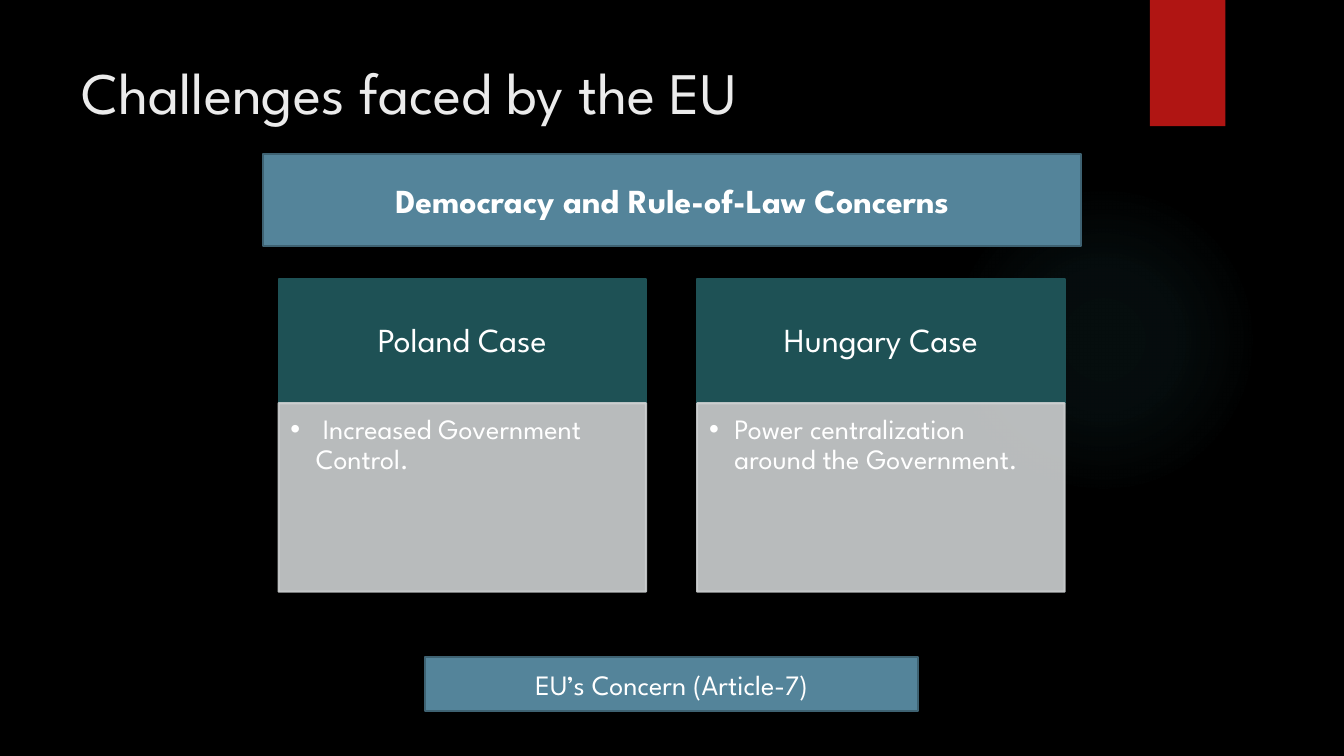
"""Builds the slide on the challenges faced by the EU."""
from dataclasses import dataclass

from lxml.etree import SubElement
from pptx import Presentation
from pptx.dml.color import RGBColor
from pptx.enum.shapes import MSO_SHAPE as Preset
from pptx.enum.text import MSO_ANCHOR as Anchor, MSO_AUTO_SIZE as AutoSize, PP_ALIGN as Align
from pptx.oxml import parse_xml
from pptx.oxml.ns import nsdecls, qn
from pptx.util import Cm, Pt


@dataclass(frozen=True)
class Theme:
    font: str = "League Spartan"
    background: str = "000000"
    title: str = "EBEBEB"
    text: str = "FFFFFF"
    banner: str = "54849A"
    banner_line: str = "3E6272"
    header: str = "1E5155"
    panel: str = "CDD0D1"
    ribbon: str = "B01513"
    glow: str = "50B9C1"
    title_size: int = 42
    heading_size: int = 24
    body_size: int = 20
    line_width: float = 1.5


theme = Theme()


def paint(box, place, fill, line, opacity=100):
    """Place a box and give it a fill and an outline."""
    box.left, box.top, box.width, box.height = (Cm(length) for length in place)
    box.fill.solid()
    box.fill.fore_color.rgb = RGBColor.from_string(fill)
    box.line.color.rgb = RGBColor.from_string(line)
    box.line.width = Pt(theme.line_width)
    if opacity < 100:
        for color in box.element.spPr.iter(qn("a:srgbClr")):
            SubElement(color, qn("a:alpha"), val=str(opacity * 1000))


def write(box, words, size, color=theme.text, bold=False, align=Align.CENTER,
          anchor=Anchor.MIDDLE, insets=(0.25, 0.13, 0.25, 0.13), spacing=1.0):
    """Set one paragraph in a box and return it."""
    frame = box.text_frame
    frame.word_wrap = True
    frame.auto_size = AutoSize.NONE
    frame.vertical_anchor = anchor
    (frame.margin_left, frame.margin_top,
     frame.margin_right, frame.margin_bottom) = (Cm(inset) for inset in insets)
    para = frame.paragraphs[0]
    para.alignment = align
    para.line_spacing = spacing
    para.space_before = Pt(0)
    span = para.add_run()
    span.text = words
    span.font.name = theme.font
    span.font.size = Pt(size)
    span.font.bold = bold
    span.font.color.rgb = RGBColor.from_string(color)
    return para


deck = Presentation()
deck.slide_width, deck.slide_height = Cm(33.87), Cm(19.05)
page = deck.slides.add_slide(deck.slide_layouts.get_by_name("Comparison"))
page.background.fill.solid()
page.background.fill.fore_color.rgb = RGBColor.from_string(theme.background)
title, *case_boxes = page.placeholders

glow = page.shapes.add_shape(Preset.OVAL, Cm(23.9), Cm(4.65), Cm(7.82), Cm(7.82))
glow.shadow.inherit = False
glow.line.fill.background()
glow.fill.background()
stops = "".join(
    f'<a:gs pos="{position * 1000}"><a:srgbClr val="{theme.glow}">'
    f'<a:alpha val="{opacity * 1000}"/></a:srgbClr></a:gs>'
    for position, opacity in ((0, 7), (36, 6), (69, 0)))
gradient = parse_xml(
    f'<a:gradFill {nsdecls("a")}><a:gsLst>{stops}</a:gsLst><a:path path="circle">'
    '<a:fillToRect l="50000" t="50000" r="50000" b="50000"/></a:path></a:gradFill>')
outline = glow.element.spPr
outline.replace(outline.find(qn("a:noFill")), gradient)

ribbon = page.shapes.add_shape(Preset.RECTANGLE, Cm(28.98), Cm(0), Cm(1.9), Cm(3.18))
ribbon.shadow.inherit = False
ribbon.line.fill.background()
ribbon.fill.solid()
ribbon.fill.fore_color.rgb = RGBColor.from_string(theme.ribbon)
for decoration in (glow, ribbon):
    title.element.addprevious(decoration.element)

title.left, title.top, title.width, title.height = Cm(1.8), Cm(1.27), Cm(26.14), Cm(3.89)
write(title, "Challenges faced by the EU", theme.title_size, theme.title,
      align=Align.LEFT, anchor=Anchor.TOP)

banners = (
    ("Democracy and Rule-of-Law Concerns", (6.63, 3.88, 20.62, 2.32), theme.heading_size, True),
    ("EU’s Concern (Article-7)", (10.72, 16.56, 12.42, 1.36), theme.body_size, False),
)
for words, place, size, bold in banners:
    banner = page.shapes.add_shape(Preset.RECTANGLE, 0, 0, 0, 0)
    banner.shadow.inherit = False
    paint(banner, place, theme.banner, theme.banner_line)
    write(banner, words, size, bold=bold)

cases = (
    ("Poland Case", " Increased Government Control."),
    ("Hungary Case", "Power centralization around the Government."),
)
for index, (heading, point) in enumerate(cases):
    left = 7.02 + index * 10.55
    header, panel = case_boxes[2 * index:2 * index + 2]
    paint(header, (left, 7.03, 9.26, 3.13), theme.header, theme.header)
    write(header, heading, theme.heading_size, insets=(0.48, 0.28, 0.48, 0.28), spacing=0.9)
    paint(panel, (left, 10.16, 9.26, 4.75), theme.panel, theme.panel, opacity=90)
    para = write(panel, point, theme.body_size, align=Align.LEFT, anchor=Anchor.TOP,
                 insets=(0.3, 0.3, 0.41, 0.43), spacing=0.9)
    properties = para._p.get_or_add_pPr()
    properties.set("marL", str(Cm(0.64)))
    properties.set("indent", str(-Cm(0.64)))

deck.save("out.pptx")
